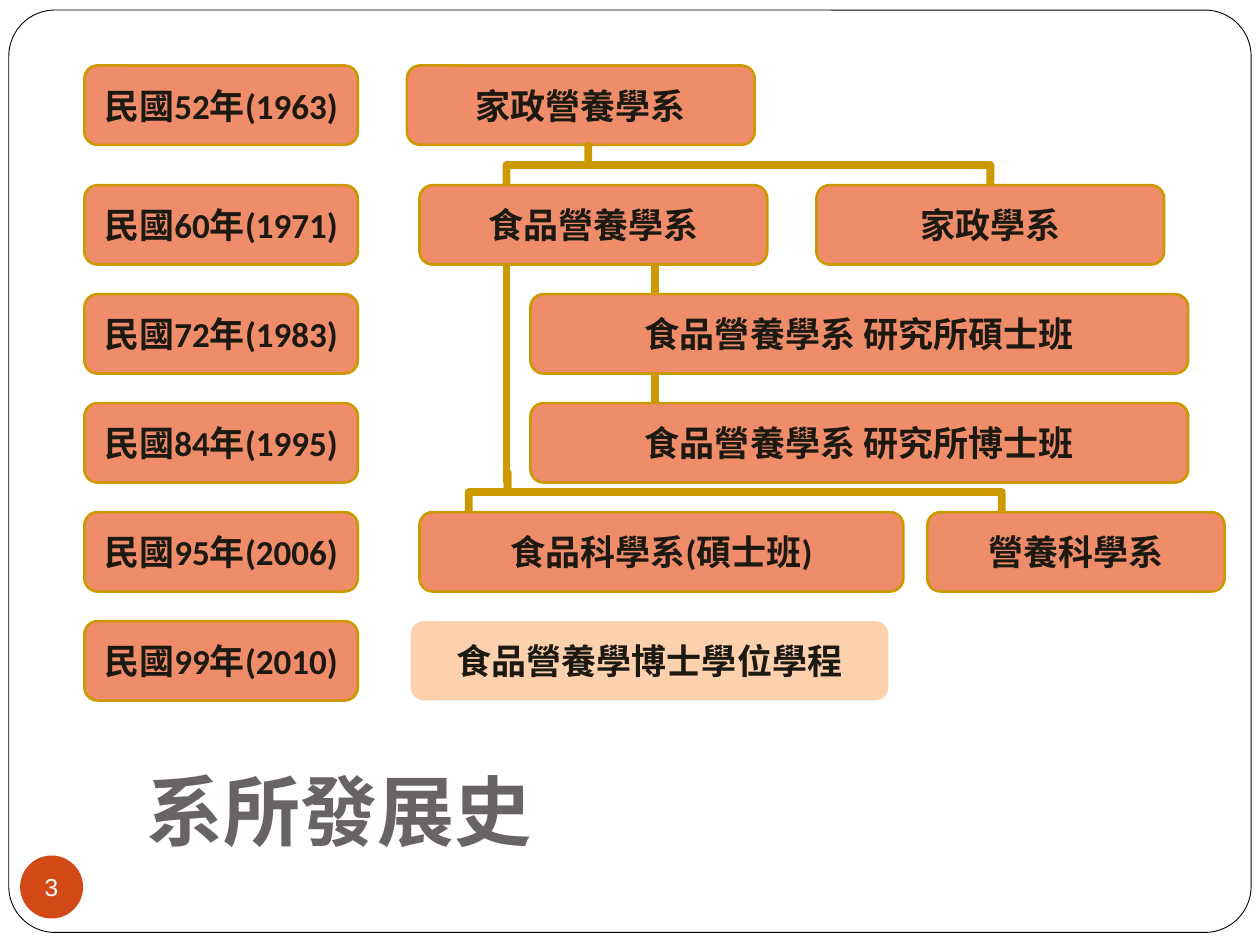
from lxml import etree
from pptx import Presentation
from pptx.dml.color import RGBColor
from pptx.enum.shapes import MSO_CONNECTOR, MSO_SHAPE
from pptx.enum.text import MSO_ANCHOR, PP_ALIGN
from pptx.oxml.ns import qn
from pptx.util import Inches, Pt

ROUNDED = MSO_SHAPE.ROUNDED_RECTANGLE
BRACE = MSO_SHAPE.LEFT_BRACE
OVAL = MSO_SHAPE.OVAL
STRAIGHT = MSO_CONNECTOR.STRAIGHT
CENTER, LEFT = PP_ALIGN.CENTER, PP_ALIGN.LEFT
MIDDLE, BOTTOM = MSO_ANCHOR.MIDDLE, MSO_ANCHOR.BOTTOM

COLORS = {
    "white": "FFFFFF", "frame": "000000", "title": "696464", "text": "1C1911",
    "box": "EF8C6A", "gold": "CC9900", "program": "FDD0AE", "badge": "D34817",
}
CJK_FONT = "Noto Sans CJK SC"
LATIN_FONT = "Calibri"

TITLE = "系所發展史"
PAGE_NUMBER = "3"
ROWS = [
    {"year": "民國52年(1963)", "units": [("家政營養學系", 3.23, 2.76)]},
    {"year": "民國60年(1971)", "brace": (4.02, 3.84, 0.831),
     "units": [("家政學系", 6.48, 2.76), ("食品營養學系", 3.33, 2.76)]},
    {"year": "民國72年(1983)", "stem": (5.2, 1),
     "units": [("食品營養學系 研究所碩士班", 4.21, 5.22)]},
    {"year": "民國84年(1995)", "stem": (5.2, 1),
     "units": [("食品營養學系 研究所博士班", 4.21, 5.22)]},
    {"year": "民國95年(2006)", "stem": (4.02, 3), "brace": (3.72, 4.23, 0.927),
     "units": [("食品科學系(碩士班)", 3.33, 3.84), ("營養科學系", 7.36, 2.36)]},
    {"year": "民國99年(2010)", "units": []},
]
PROGRAM = ("食品營養學博士學位學程", 3.26, 3.79)

FIRST_TOP, SECOND_TOP, ROW_STEP = 0.52, 1.47, 0.865
BOX_HEIGHT, BRACE_HEIGHT = 0.63, 0.31
YEAR_LEFT, YEAR_WIDTH = 0.67, 2.17


def color(name):
    return RGBColor.from_string(COLORS[name])


def row_top(index):
    return SECOND_TOP + (index - 1) * ROW_STEP if index else FIRST_TOP


def write(shape, text, size, font, ink, bold, align, anchor):
    frame = shape.text_frame
    frame.text = text
    frame.vertical_anchor = anchor
    para = frame.paragraphs[0]
    para.alignment = align
    span = para.runs[0]
    span.font.size = Pt(size)
    span.font.bold = bold
    span.font.color.rgb = color(ink)
    span.font.name = font
    east_asian = etree.SubElement(span.font._element, qn("a:ea"))
    east_asian.set("typeface", CJK_FONT)


def add_shape(page, kind, left, top, width, height, fill, line=None, weight=1.5):
    shape = page.shapes.add_shape(
        kind, Inches(left), Inches(top), Inches(width), Inches(height))
    shape.shadow.inherit = False
    if fill:
        shape.fill.solid()
        shape.fill.fore_color.rgb = color(fill)
    else:
        shape.fill.background()
    if line:
        shape.line.color.rgb = color(line)
        shape.line.width = Pt(weight)
    else:
        shape.line.fill.background()
    return shape


def add_box(page, text, left, top, width, font=LATIN_FONT, fill="box", line="gold"):
    box = add_shape(page, ROUNDED, left, top, width, BOX_HEIGHT, fill, line)
    write(box, text, 20, font, "text", True, CENTER, MIDDLE)
    box.text_frame.word_wrap = False


def add_brace(page, left, top, span, tip):
    middle = left + span / 2
    brace = add_shape(page, BRACE, middle - BRACE_HEIGHT / 2,
                      top - BRACE_HEIGHT / 2 - span / 2,
                      BRACE_HEIGHT, span, None, "gold", 4.5)
    brace.rotation = 90
    brace.adjustments[0] = 0
    brace.adjustments[1] = tip


def add_stem(page, x, top, bottom):
    stem = page.shapes.add_connector(
        STRAIGHT, Inches(x), Inches(top), Inches(x), Inches(bottom))
    stem.line.color.rgb = color("gold")
    stem.line.width = Pt(4.5)
    etree.SubElement(stem._element.spPr, qn("a:effectLst"))


def add_row(page, index, row):
    top = row_top(index)
    add_box(page, row["year"], YEAR_LEFT, top, YEAR_WIDTH)
    if "stem" in row:
        x, rows_up = row["stem"]
        end = row_top(index - 1) + BOX_HEIGHT if "brace" in row else top
        add_stem(page, x, row_top(index - rows_up) + BOX_HEIGHT, end)
    if "brace" in row:
        left, span, tip = row["brace"]
        add_brace(page, left, top - 0.005, span, tip)
    for text, left, width in row["units"]:
        add_box(page, text, left, top, width)


def main():
    deck = Presentation()
    deck.slide_width, deck.slide_height = Inches(10), Inches(7.5)
    page = deck.slides.add_slide(deck.slide_layouts[5])

    title = page.shapes.title
    title.left, title.top = Inches(1.06), Inches(5.64)
    title.width, title.height = Inches(7.92), Inches(1.25)
    write(title, TITLE, 44, CJK_FONT, "title", True, LEFT, BOTTOM)
    title.text_frame.margin_bottom = Inches(0.1)

    frame = add_shape(page, ROUNDED, 0.07, 0.08, 9.86, 7.32, "white", "frame", 0.5)
    frame.adjustments[0] = 0.05
    page.shapes._spTree.remove(frame._element)
    title._element.addprevious(frame._element)

    text, left, width = PROGRAM
    add_box(page, text, left, row_top(5), width, CJK_FONT, "program", None)
    for index, row in enumerate(ROWS):
        add_row(page, index, row)

    badge = add_shape(page, OVAL, 0.16, 6.79, 0.5, 0.5, "badge")
    write(badge, PAGE_NUMBER, 14, "Arial", "white", False, CENTER, MIDDLE)
    inside = badge.text_frame
    inside.word_wrap = False
    inside.margin_left = inside.margin_right = 0
    inside.margin_top = inside.margin_bottom = 0

    deck.save("out.pptx")


if __name__ == "__main__":
    main()
